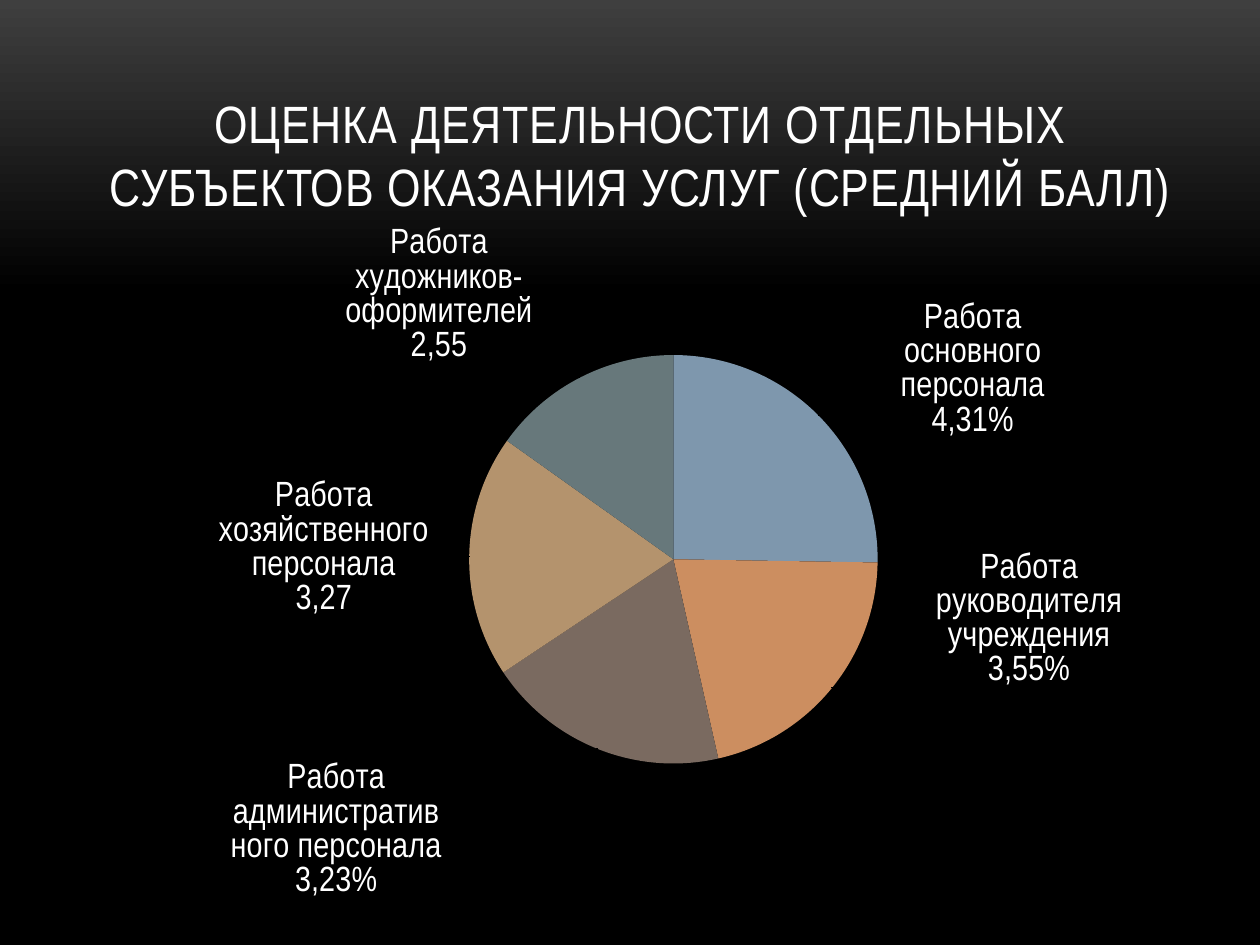
from lxml import etree
from pptx import Presentation
from pptx import util as u
from pptx.chart.data import CategoryChartData
from pptx.dml.color import RGBColor
from pptx.enum import chart as ch, text
from pptx.oxml.ns import qn

SLICES = [
    ("Работа основного персонала", 25, "4,31%", "7E97AD", 0.07, 0.04),
    ("Работа руководителя учреждения", 21, "3,55%", "CC8E60", 0.09, -0.2),
    ("Работа административного персонала", 19, "3,23%", "7A6A60", -0.14, 0.01),
    ("Работа хозяйственного персонала", 19, "3,27", "B4936D", -0.03, -0.01),
    ("Работа художников-оформителей", 15, "2,55", "67787B", -0.04, -0.01),
]


def rgb(value):
    return RGBColor.from_string(value)


def manual_layout(**values):
    layout = etree.Element(qn("c:layout"))
    manual = etree.SubElement(layout, qn("c:manualLayout"))
    for name, value in values.items():
        etree.SubElement(manual, qn("c:" + name)).set("val", str(value))
    return layout


class Deck:
    font = "Arial Narrow"
    color = "FFFFFF"

    def __init__(self, width, height):
        self.prs = Presentation()
        self.prs.slide_width = u.Inches(width)
        self.prs.slide_height = u.Inches(height)
        self.s = self.prs.slides.add_slide(self.prs.slide_layouts[6])

    def style(self, font, size):
        font.name = self.font
        font.size = u.Pt(size)
        font.color.rgb = rgb(self.color)

    def background(self, *stops):
        fill = self.s.background.fill
        fill.gradient()
        fill.gradient_angle = 270
        for stop, (position, color) in zip(fill.gradient_stops, stops):
            stop.position = position
            stop.color.rgb = rgb(color)

    def title(self, content, box, size):
        tf = self.s.shapes.add_textbox(*map(u.Inches, box)).text_frame
        tf.word_wrap = True
        tf.vertical_anchor = text.MSO_ANCHOR.BOTTOM
        tf.text = content
        p = tf.paragraphs[0]
        p.alignment = text.PP_ALIGN.CENTER
        r = p.runs[0]
        self.style(r.font, size)
        r.font._element.set("spc", "50")

    def pie(self, slices, box, size):
        data = CategoryChartData()
        data.categories = [row[0] for row in slices]
        data.add_series("Series 1", [row[1] for row in slices])
        chart = self.s.shapes.add_chart(
            ch.XL_CHART_TYPE.PIE, *map(u.Inches, box), data).chart
        chart.has_legend = False
        chart.has_title = False
        self.style(chart.font, size)
        plot = chart.plots[0]
        plot.vary_by_categories = True
        plot.has_data_labels = True
        labels = plot.data_labels
        labels.show_category_name = True
        labels.show_percentage = True
        labels.show_value = False
        labels.position = ch.XL_LABEL_POSITION.OUTSIDE_END
        self.style(labels.font, size)

        area = chart._chartSpace.chart.plotArea
        for old in area.findall(qn("c:layout")):
            area.remove(old)
        area.insert(0, manual_layout(
            layoutTarget="inner", xMode="edge", yMode="edge",
            x=0.34, y=0.2, w=0.38, h=0.58))

        for i, (name, _, score, color, dx, dy) in enumerate(slices):
            point = plot.series[0].points[i]
            point.format.fill.solid()
            point.format.fill.fore_color.rgb = rgb(color)
            label = point.data_label
            label.text_frame.text = f"{name}\n{score}"
            for p in label.text_frame.paragraphs:
                for r in p.runs:
                    self.style(r.font, size)
            label.position = ch.XL_LABEL_POSITION.OUTSIDE_END
            dlbl = label._dLbl
            dlbl.insert(1, manual_layout(x=dx, y=dy))

    def save(self):
        self.prs.save("out.pptx")


def main():
    deck = Deck(10, 7.5)
    deck.background((0, "3F3F3F"), (0.31, "000000"))
    deck.title("ОЦЕНКА ДЕЯТЕЛЬНОСТИ ОТДЕЛЬНЫХ СУБЪЕКТОВ ОКАЗАНИЯ УСЛУГ (СРЕДНИЙ БАЛЛ)",
               (0.75, 0.52, 8.67, 1.25), 30)
    deck.pie(SLICES, (0.75, 1.7, 8.67, 5.59), 20)
    deck.save()


if __name__ == "__main__":
    main()
